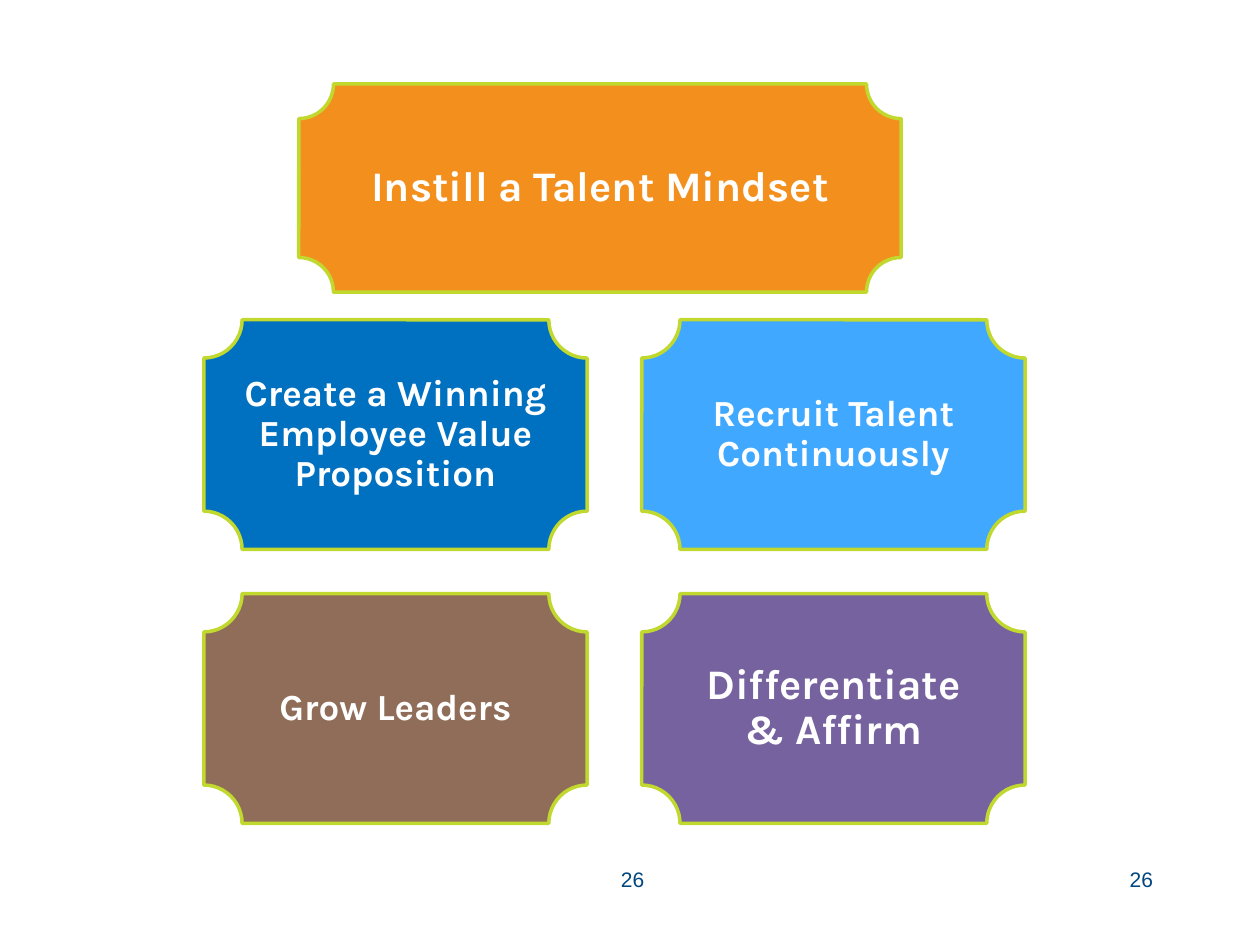
from pptx import Presentation
from pptx.dml.color import RGBColor
from pptx.enum import shapes, text
from pptx.util import Pt

# Content: label, fill, text size, inner margin
BANNER = ("Instill a Talent Mindset", "F3901D", 24, 7.2)
CARDS = [
    ("Create a Winning Employee Value Proposition", "0070C0", 21, 6.5),
    ("Recruit Talent Continuously", "40A9FF", 21, 6.5),
    ("Grow Leaders", "8F6D58", 21, 6.5),
    ("Differentiate & Affirm", "76629E", 24, 7.2),
]
PAGE = "26"
PAGE_BOXES = [(498.25, text.PP_ALIGN.RIGHT), (347.75, text.PP_ALIGN.LEFT)]

# Layout, in points
BANNER_BOX = (170.75, 48, 344.25, 119)
GRID_LEFT, GRID_TOP = 116.5, 182.75
CARD_W, CARD_H = 219, 131.25
GAP_X, GAP_Y = 31.25, 25.25


def color(hex_string):
    return RGBColor.from_string(hex_string)


def style(p, align, font, size, hex_string, bold=False):
    p.alignment = align
    f = p.runs[0].font
    f.name, f.size, f.bold = font, Pt(size), bold
    f.color.rgb = color(hex_string)


def add_plaque(s, box, label, fill, size, margin):
    sp = s.shapes.add_shape(shapes.MSO_SHAPE.PLAQUE, *map(Pt, box))
    sp.shadow.inherit = False
    sp.fill.solid()
    sp.fill.fore_color.rgb = color(fill)
    sp.line.color.rgb = color("C1D82F")
    sp.line.width = Pt(2)
    tf = sp.text_frame
    tf.text = label
    tf.word_wrap = True
    tf.vertical_anchor = text.MSO_ANCHOR.MIDDLE
    tf.margin_left = tf.margin_right = tf.margin_top = tf.margin_bottom = Pt(margin)
    p = tf.paragraphs[0]
    p.line_spacing = 0.9
    style(p, text.PP_ALIGN.CENTER, "Karla", size, "FFFFFF", True)


prs = Presentation()
prs.slide_width, prs.slide_height = Pt(720), Pt(540)
s = prs.slides.add_slide(prs.slide_layouts[6])

# Banner and two-by-two grid of cards
add_plaque(s, BANNER_BOX, *BANNER)
for i, card in enumerate(CARDS):
    row, col = divmod(i, 2)
    x = GRID_LEFT + col * (CARD_W + GAP_X)
    y = GRID_TOP + row * (CARD_H + GAP_Y)
    add_plaque(s, (x, y, CARD_W, CARD_H), *card)

# Page numbers
for x, align in PAGE_BOXES:
    tf = s.shapes.add_textbox(Pt(x), Pt(491.75), Pt(167.75), Pt(28.75)).text_frame
    tf.word_wrap = True
    tf.text = PAGE
    style(tf.paragraphs[0], align, "Arial", 12, "00467F")

prs.save("out.pptx")
